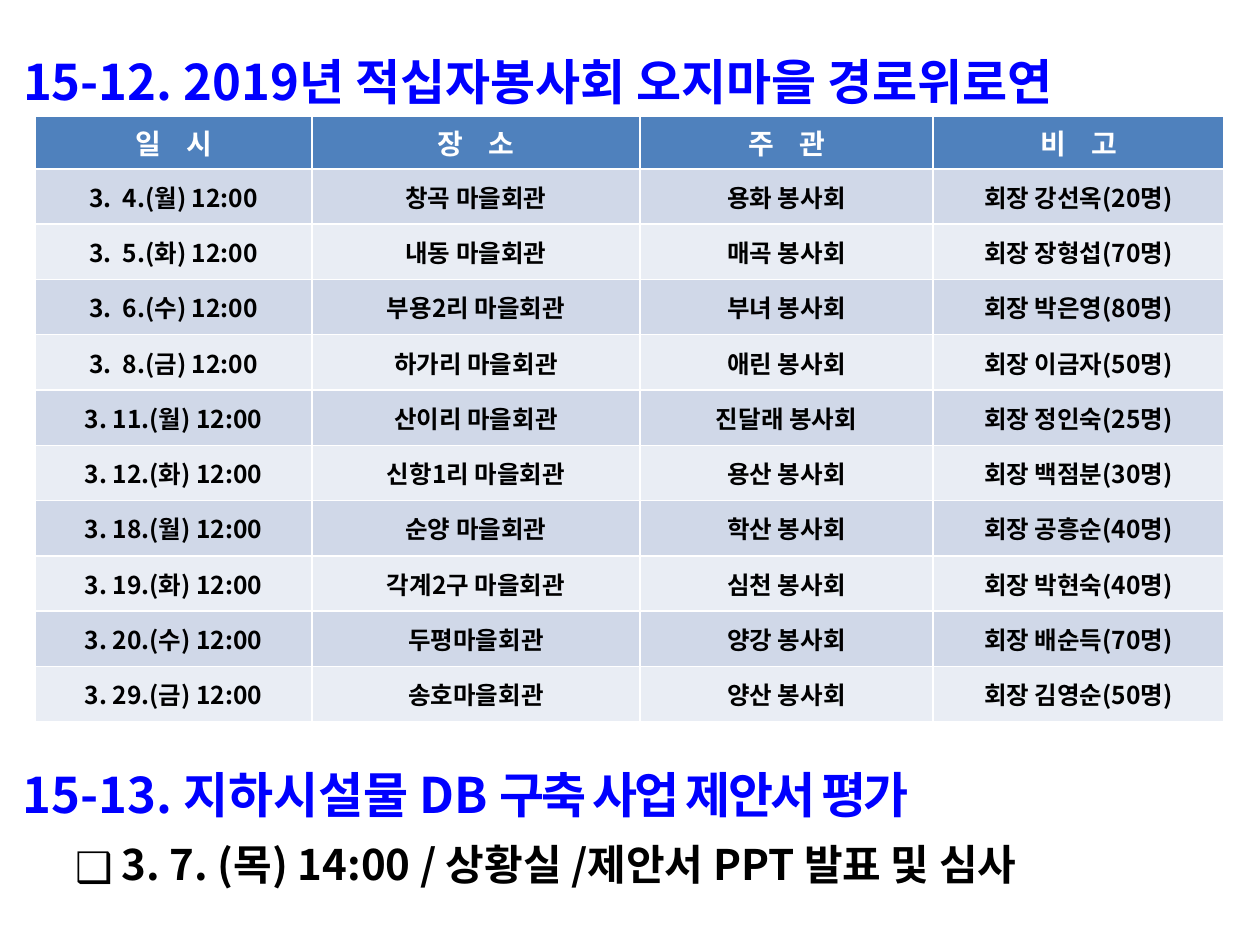
from lxml.etree import SubElement
from pptx import Presentation
from pptx.dml.color import RGBColor
from pptx.enum.text import MSO_ANCHOR as Anchor, MSO_AUTO_SIZE as AutoSize, PP_ALIGN as Align
from pptx.oxml.ns import qn
from pptx.util import Pt

PX = 914400 / 126
FONT = "Noto Sans CJK KR"
BLUE = RGBColor(0x00, 0x00, 0xFF)
BLACK = RGBColor(0x00, 0x00, 0x00)
WHITE = RGBColor(0xFF, 0xFF, 0xFF)
HEADER_FILL = RGBColor(0x4F, 0x81, 0xBD)
BAND_FILLS = [RGBColor(0xD0, 0xD8, 0xE8), RGBColor(0xE9, 0xED, 0xF4)]

TITLE = "15-12. 2019년 적십자봉사회 오지마을 경로위로연"
HEADER = ("일    시", "장    소", "주    관", "비    고")
EVENTS = [
    ("3.  4.(월) 12:00", "창곡 마을회관", "용화 봉사회", "회장 강선옥(20명)"),
    ("3.  5.(화) 12:00", "내동 마을회관", "매곡 봉사회", "회장 장형섭(70명)"),
    ("3.  6.(수) 12:00", "부용2리 마을회관", "부녀 봉사회", "회장 박은영(80명)"),
    ("3.  8.(금) 12:00", "하가리 마을회관", "애린 봉사회", "회장 이금자(50명)"),
    ("3. 11.(월) 12:00", "산이리 마을회관", "진달래 봉사회", "회장 정인숙(25명)"),
    ("3. 12.(화) 12:00", "신항1리 마을회관", "용산 봉사회", "회장 백점분(30명)"),
    ("3. 18.(월) 12:00", "순양 마을회관", "학산 봉사회", "회장 공흥순(40명)"),
    ("3. 19.(화) 12:00", "각계2구 마을회관", "심천 봉사회", "회장 박현숙(40명)"),
    ("3. 20.(수) 12:00", "두평마을회관", "양강 봉사회", "회장 배순득(70명)"),
    ("3. 29.(금) 12:00", "송호마을회관", "양산 봉사회", "회장 김영순(50명)"),
]
REVIEW_HEADING = ("15-13. 지하시설물 DB ", "구축 사업 제안서 평가")
REVIEW_DETAIL = "3. 7. (목) 14:00 / 상황실 /제안서 PPT 발표 및 심사"

TITLE_BOX = (0, 16, 1260, 98)
TABLE_LEFT, TABLE_TOP = 35, 116
COLUMN_WIDTHS = (277, 328, 293, 291)
HEADER_HEIGHT, BODY_HEIGHT = 52, 553
REVIEW_BOX = (0, 741, 1260, 164)
TEXT_INSET = 23
DETAIL_INDENT, BULLET_HANG = 99, 47


def px(n):
    return round(n * PX)


def add_run(p, text, size, color, font=FONT, spacing=0):
    r = p.add_run()
    r.text = text
    for name, value in dict(name=font, size=Pt(size), bold=True).items():
        setattr(r.font, name, value)
    r.font.color.rgb = color
    rPr = r.font._element
    SubElement(rPr, qn("a:ea"), typeface=FONT)
    if spacing:
        rPr.set("spc", str(round(spacing * 100)))


def set_frame(tf):
    frame = dict(word_wrap=True, auto_size=AutoSize.NONE, vertical_anchor=Anchor.TOP,
                 margin_left=px(TEXT_INSET), margin_right=px(13),
                 margin_top=px(6), margin_bottom=px(6))
    for name, value in frame.items():
        setattr(tf, name, value)


def add_title(slide):
    title = slide.shapes.title
    title.left, title.top, title.width, title.height = map(px, TITLE_BOX)
    set_frame(title.text_frame)
    p = title.text_frame.paragraphs[0]
    p.alignment, p.line_spacing = Align.LEFT, 1.5
    add_run(p, TITLE, 28, BLUE)


def add_schedule(slide):
    rows = [HEADER] + EVENTS
    frame = slide.shapes.add_table(
        len(rows), len(HEADER), px(TABLE_LEFT), px(TABLE_TOP),
        px(sum(COLUMN_WIDTHS)), px(HEADER_HEIGHT + BODY_HEIGHT))
    table = frame.table
    for column, width in zip(table.columns, COLUMN_WIDTHS):
        column.width = px(width)
    for i, texts in enumerate(rows):
        if i == 0:
            height, fill = HEADER_HEIGHT, HEADER_FILL
            style = dict(size=16, color=WHITE, font="Arial")
        else:
            height, fill = BODY_HEIGHT / len(EVENTS), BAND_FILLS[(i - 1) % 2]
            style = dict(size=14, color=BLACK)
        table.rows[i].height = px(height)
        for cell, text in zip(table.rows[i].cells, texts):
            cell.fill.solid()
            cell.fill.fore_color.rgb = fill
            cell.vertical_anchor = Anchor.MIDDLE
            p = cell.text_frame.paragraphs[0]
            p.alignment = Align.CENTER
            add_run(p, text, **style)


def add_review(slide):
    tf = slide.shapes.add_textbox(*map(px, REVIEW_BOX)).text_frame
    set_frame(tf)
    heading, detail = tf.paragraphs[0], tf.add_paragraph()
    for p in (heading, detail):
        p.alignment, p.line_spacing = Align.JUSTIFY, 1.3
    for text, spacing in zip(REVIEW_HEADING, (0, -1.5)):
        add_run(heading, text, 28, BLUE, spacing=spacing)
    detail.level = 1
    pPr = detail._p.get_or_add_pPr()
    pPr.set("marL", str(px(DETAIL_INDENT)))
    pPr.set("indent", str(-px(BULLET_HANG)))
    bullet_color = SubElement(pPr, qn("a:buClr"))
    SubElement(bullet_color, qn("a:srgbClr"), val=str(BLACK))
    SubElement(pPr, qn("a:buFont"), typeface=FONT)
    SubElement(pPr, qn("a:buChar"), char="❑")
    add_run(detail, REVIEW_DETAIL, 24, BLACK)


def main():
    prs = Presentation()
    prs.slide_width, prs.slide_height = px(1260), px(945)
    slide = prs.slides.add_slide(prs.slide_layouts.get_by_name("Title Only"))
    add_title(slide)
    add_schedule(slide)
    add_review(slide)
    prs.save("out.pptx")


if __name__ == "__main__":
    main()
